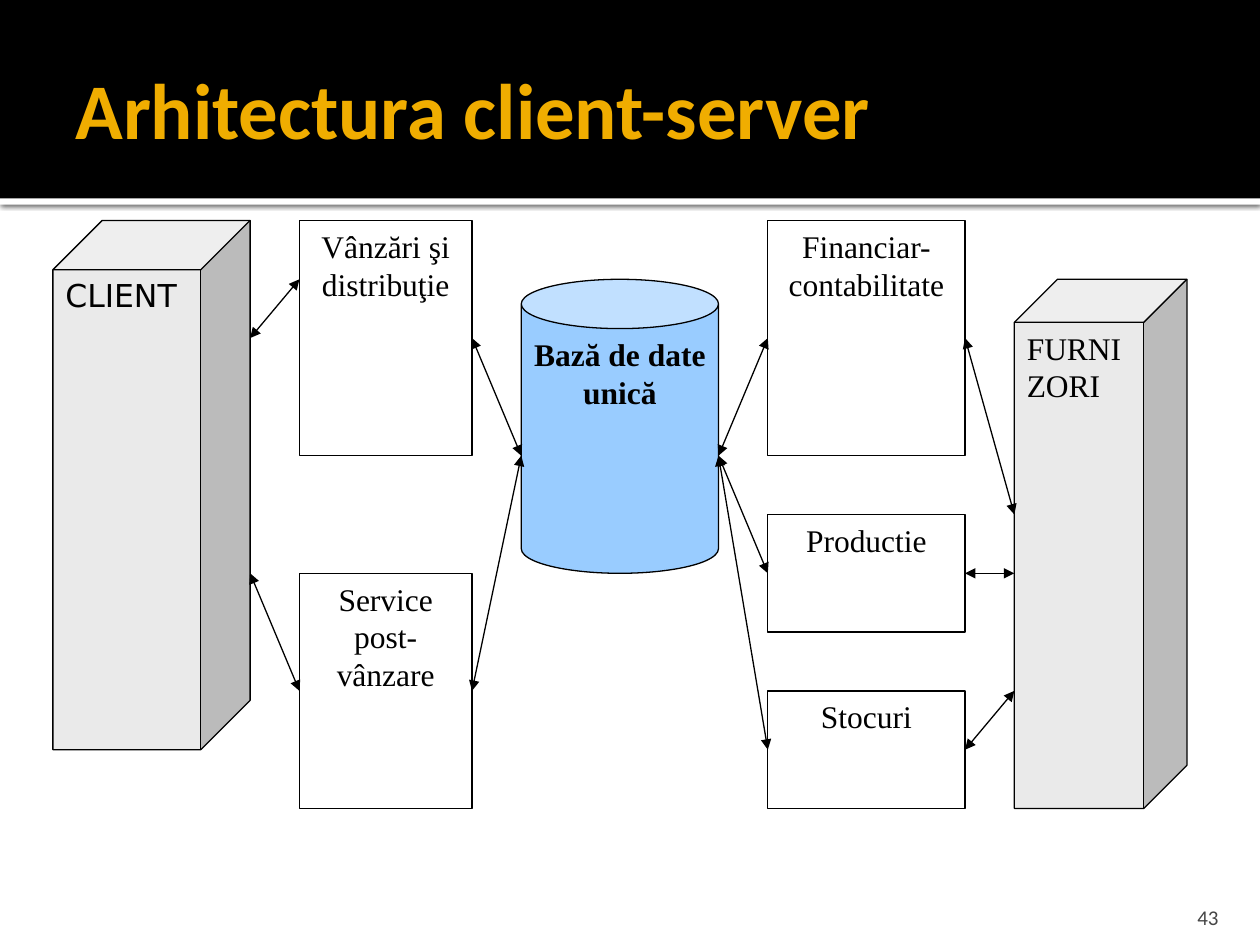
"""Build the client-server architecture slide."""
from dataclasses import dataclass

from lxml import etree
from pptx import Presentation
from pptx import util as u
from pptx.dml.color import RGBColor
from pptx.enum import shapes, text
from pptx.oxml.ns import qn

WIDTH, HEIGHT = 10, 7.5
LEFT, TOP = 0.42, 1.75
COLUMN, ROW = 9 / 46, HEIGHT * 0.56 / 9
BANNER = HEIGHT * 0.21
SERIF = "Times New Roman"
RECTANGLE = shapes.MSO_SHAPE.RECTANGLE
CUBE = shapes.MSO_SHAPE.CUBE
CAN = shapes.MSO_SHAPE.CAN
ALIGN = text.PP_ALIGN
ANCHOR = text.MSO_ANCHOR


@dataclass
class Node:
    """A labelled shape, placed in columns and rows."""
    label: str
    column: int
    row: int
    columns: int
    rows: int
    kind: int = RECTANGLE
    fill: str = "FFFFFF"
    font: str = SERIF
    align: int = ALIGN.CENTER
    bold: bool = False


@dataclass
class Link:
    """A two-headed arrow between two grid points."""
    begin: tuple[int, int]
    end: tuple[int, int]


NODES = [
    Node("CLIENT", 0, 0, 8, 9, CUBE, "EAEAEA", "DejaVu Sans", ALIGN.LEFT),
    Node("Vânzări şi distribuţie", 10, 0, 7, 4),
    Node("Service post-vânzare", 10, 6, 7, 4),
    Node("Bază de date unică", 19, 1, 8, 5, CAN, "99CCFF", bold=True),
    Node("Financiar-contabilitate", 29, 0, 8, 4),
    Node("Productie", 29, 5, 8, 2),
    Node("Stocuri", 29, 8, 8, 2),
    Node("FURNIZORI", 39, 1, 7, 9, CUBE, "EAEAEA", align=ALIGN.LEFT),
]

LINKS = [
    Link((8, 2), (10, 1)),
    Link((8, 6), (10, 8)),
    Link((17, 2), (19, 4)),
    Link((19, 4), (17, 8)),
    Link((27, 4), (29, 2)),
    Link((27, 4), (29, 6)),
    Link((27, 4), (29, 9)),
    Link((37, 2), (39, 5)),
    Link((37, 6), (39, 6)),
    Link((37, 9), (39, 8)),
]


def color(value: str) -> RGBColor:
    """Return the colour for a hex string."""
    return RGBColor.from_string(value)


def grid(column: float, row: float) -> tuple[int, int]:
    """Return the slide position of a grid point."""
    return u.Inches(LEFT + column * COLUMN), u.Inches(TOP + row * ROW)


def apply(target, values: dict) -> None:
    """Set each named attribute on the target."""
    for name, value in values.items():
        setattr(target, name, value)


def write(shape, label: str, align: int, frame_format: dict, font_format: dict,
          font_color: str = "000000") -> None:
    """Put one formatted paragraph into a shape."""
    frame = shape.text_frame
    apply(frame, {"word_wrap": True, **frame_format})
    paragraph = frame.paragraphs[0]
    paragraph.alignment = align
    run = paragraph.add_run()
    run.text = label
    apply(run.font, font_format)
    run.font.color.rgb = color(font_color)


def add_band(slide, height: float, fill: str):
    """Draw a full-width band from the top of the slide."""
    band = slide.shapes.add_shape(RECTANGLE, 0, 0, u.Inches(WIDTH), u.Inches(height))
    band.shadow.inherit = False
    band.fill.solid()
    band.fill.fore_color.rgb = color(fill)
    band.line.fill.background()
    return band


def add_shadow(shape) -> None:
    """Give a shape a soft shadow below it."""
    effects = shape._element.spPr.find(qn("a:effectLst"))
    shadow = etree.SubElement(effects, qn("a:outerShdw"), blurRad=str(u.Pt(2.5)),
                              dist=str(u.Pt(0.8)), dir="5400000", algn="tl",
                              rotWithShape="0")
    shade = etree.SubElement(shadow, qn("a:srgbClr"), val="000000")
    etree.SubElement(shade, qn("a:alpha"), val="60000")


def add_node(slide, node: Node):
    """Draw a node with its label at the top."""
    shape = slide.shapes.add_shape(node.kind, *grid(node.column, node.row),
                                   u.Inches(node.columns * COLUMN),
                                   u.Inches(node.rows * ROW))
    shape.shadow.inherit = False
    shape.fill.solid()
    shape.fill.fore_color.rgb = color(node.fill)
    shape.line.color.rgb = color("000000")
    shape.line.width = u.Pt(0.75)
    if node.kind != RECTANGLE:
        shape.adjustments[0] = 0.25
    write(shape, node.label, node.align, {"vertical_anchor": ANCHOR.TOP},
          {"name": node.font, "size": u.Pt(18), "bold": node.bold})
    return shape


def add_link(slide, link: Link, sites: dict) -> None:
    """Draw an arrow, joined where it meets the middle of a side."""
    line = slide.shapes.add_connector(shapes.MSO_CONNECTOR.STRAIGHT,
                                      *grid(*link.begin), *grid(*link.end))
    if link.begin in sites:
        line.begin_connect(*sites[link.begin])
    if link.end in sites:
        line.end_connect(*sites[link.end])
    line.line.color.rgb = color("000000")
    line.line.width = u.Pt(0.75)
    outline = line.line._get_or_add_ln()
    for end in ("a:headEnd", "a:tailEnd"):
        etree.SubElement(outline, qn(end), type="triangle")
    etree.SubElement(line._element.spPr, qn("a:effectLst"))


def add_text(slide, box: tuple, label: str, align: int, frame_format: dict,
             font_format: dict, font_color: str) -> None:
    """Add a text box given in inches."""
    shape = slide.shapes.add_textbox(*map(u.Inches, box))
    write(shape, label, align, frame_format, font_format, font_color)


def main() -> None:
    """Build and save the slide."""
    presentation = Presentation()
    presentation.slide_width = u.Inches(WIDTH)
    presentation.slide_height = u.Inches(HEIGHT)
    slide = presentation.slides.add_slide(presentation.slide_layouts[6])

    add_shadow(add_band(slide, BANNER + 0.05, "FFFFFF"))
    add_band(slide, BANNER, "000000")
    add_text(slide, (0.5, 0.17, WIDTH * 0.9, 1.37), "Arhitectura client-server", ALIGN.LEFT,
             {"vertical_anchor": ANCHOR.MIDDLE, "margin_right": u.Inches(0.05)},
             {"name": "Calibri", "size": u.Pt(45), "bold": True}, "F0AD00")
    add_text(slide, (8.97, 7.08, WIDTH * 0.08, 0.3), "43", ALIGN.RIGHT,
             {"vertical_anchor": ANCHOR.BOTTOM, "margin_bottom": 0},
             {"name": "Calibri", "size": u.Pt(12)}, "454545")

    sites = {}
    for node in NODES:
        shape = add_node(slide, node)
        if node.kind == RECTANGLE:
            middle = node.row + node.rows / 2
            sites[node.column, middle] = (shape, 1)
            sites[node.column + node.columns, middle] = (shape, 3)
    for link in LINKS:
        add_link(slide, link, sites)
    presentation.save("out.pptx")


if __name__ == "__main__":
    main()
